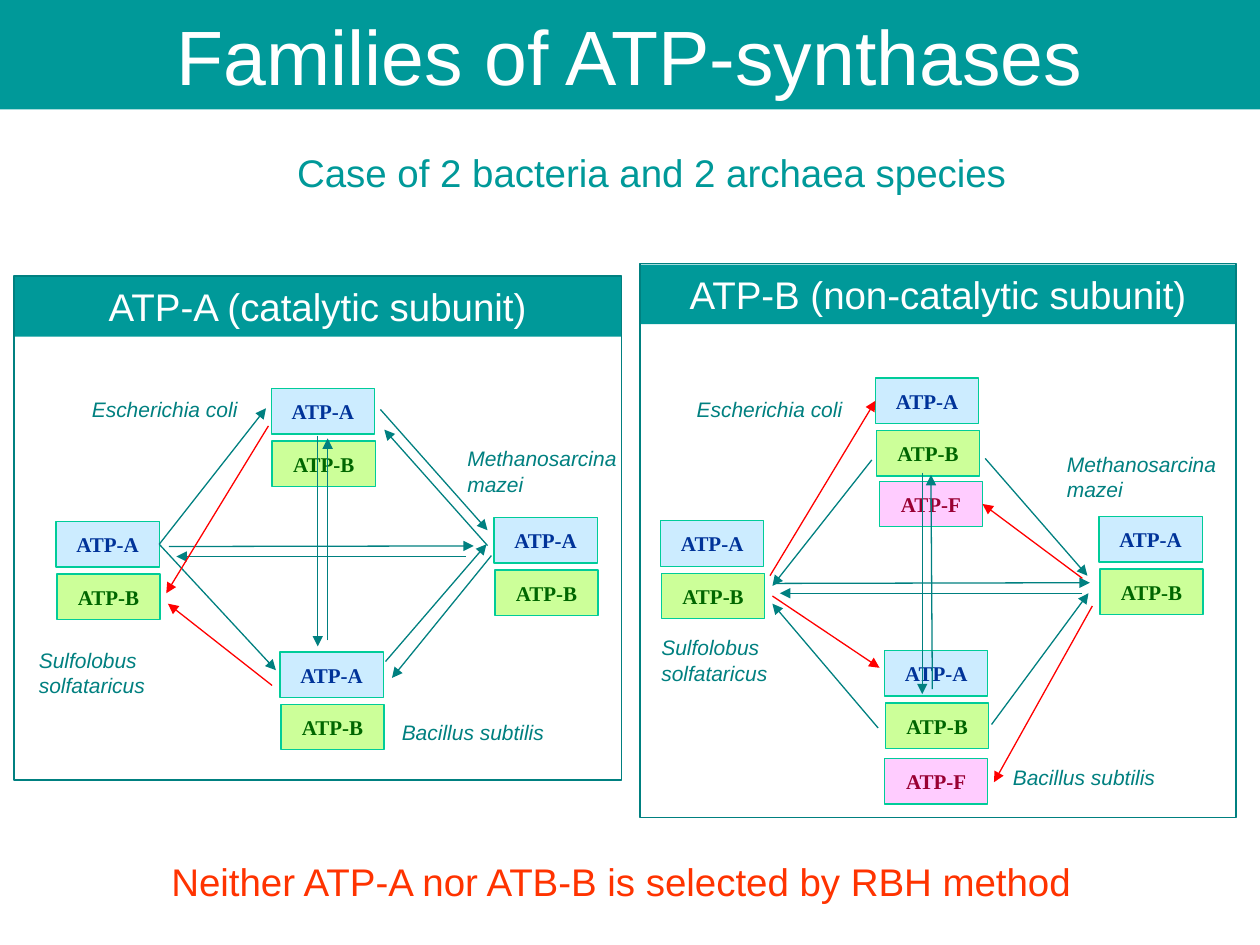
from dataclasses import dataclass

from lxml import etree
from pptx import Presentation
from pptx.dml.color import RGBColor
from pptx.enum.shapes import MSO_CONNECTOR, MSO_SHAPE
from pptx.enum.text import MSO_ANCHOR, PP_ALIGN
from pptx.oxml.ns import qn
from pptx.util import Pt

RECTANGLE = MSO_SHAPE.RECTANGLE
STRAIGHT = MSO_CONNECTOR.STRAIGHT
LEFT, CENTER = PP_ALIGN.LEFT, PP_ALIGN.CENTER
TOP, MIDDLE = MSO_ANCHOR.TOP, MSO_ANCHOR.MIDDLE
LEFT_SIDE, RIGHT_SIDE = 1, 3


@dataclass(frozen=True)
class Theme:
    """Colours, fonts and sizes of the slide."""
    teal: str = "009999"
    dark_teal: str = "008080"
    red: str = "FF0000"
    orange: str = "FF3300"
    white: str = "FFFFFF"
    box_line: str = "00CC99"
    sans: str = "Arial"
    serif: str = "Times New Roman"
    title_size: float = 44
    heading_size: float = 22
    label_size: float = 12
    line_width: float = 0.75


THEME = Theme()
SUBUNIT_COLORS = {"A": ("CCECFF", "003399"), "B": ("CCFF99", "006600"), "F": ("FFCCFF", "990033")}
BOX_WIDTH, BOX_HEIGHT, BOX_PITCH = 59, 26, 30

CATALYTIC = {
    "frame": (8, 157.7, 347, 288),
    "heading": "ATP-A (catalytic subunit)",
    "species": [
        ("Escherichia coli", (45.4, 223.2, 100.8, 21.6)),
        ("Bacillus subtilis", (222.5, 407.5, 99.4, 21.6)),
        ("Methanosarcina\nmazei", (260, 251.3, 103.7, 36)),
        ("Sulfolobus\nsolfataricus", (15.1, 366.5, 78.5, 36)),
    ],
    "stacks": {"coli": (155, 222), "solfataricus": (32, 298),
               "subtilis": (160, 372.5), "mazei": (282.3, 295.7)},
    "extras": {},
    "similar": [
        (("solfataricus A", RIGHT_SIDE), (152, 233.3)),
        ((217.4, 234), (278.6, 303)),
        ((278.6, 311.8), (219.6, 245.5)),
        ((280.8, 317.5), (224, 387.4)),
        ((220.3, 378), (278, 311)),
        (("solfataricus A", RIGHT_SIDE), (157.7, 383)),
        ((96.5, 312.3), (270.7, 312)),
        ((266.4, 318), (100.8, 318)),
        ((181.6, 249), (181.6, 369.4)),
        ((187.2, 366), (187.2, 250.5)),
    ],
    "conflicting": [
        ((153.4, 243.4), (95, 339)),
        ((155.5, 391.7), (96, 345)),
    ],
}

NON_CATALYTIC = {
    "frame": (365.8, 150.5, 340.5, 316.8),
    "heading": "ATP-B (non-catalytic subunit)",
    "species": [
        ("Escherichia coli", (391, 223.2, 100.8, 21.6)),
        ("Bacillus subtilis", (571.7, 433.4, 99.4, 21.6)),
        ("Methanosarcina\nmazei", (602.6, 254.2, 103.7, 36)),
        ("Sulfolobus\nsolfataricus", (370.8, 359.3, 78.5, 36)),
    ],
    "stacks": {"coli": (500.3, 216), "solfataricus": (377.5, 297.6),
               "subtilis": (505.5, 371.7), "mazei": (628, 295.2)},
    "extras": {"coli": (502.5, 275), "subtilis": (505.5, 433.5)},
    "similar": [
        ((442, 333.4), (622.8, 333)),
        ((618.5, 339), (445.7, 339)),
        ((527, 270), (527, 396.7)),
        ((532.8, 393.8), (532, 271.4)),
        ((498.2, 262.8), (441.4, 334.8)),
        ((563, 262), (621.4, 329)),
        ((501.8, 416), (441.4, 345)),
        ((566.6, 414), (622, 339)),
    ],
    "conflicting": [
        ((440, 329), ("coli A", LEFT_SIDE)),
        ((618.5, 330.5), ("coli F", RIGHT_SIDE)),
        ((441.4, 340.6), (502.6, 381.6)),
        ((624.2, 346.3), (568, 447)),
    ],
}


def color(value):
    """Turn a hex string into a colour."""
    return RGBColor.from_string(value)


def write_text(shape, text, size, ink, font=THEME.sans, align=LEFT, anchor=TOP,
               wrap=True, bold=False, italic=False):
    """Put formatted text in a shape."""
    frame = shape.text_frame
    frame.text = text
    frame.word_wrap = wrap
    frame.vertical_anchor = anchor
    for paragraph in frame.paragraphs:
        paragraph.alignment = align
        for run in paragraph.runs:
            run.font.name, run.font.size = font, Pt(size)
            run.font.bold, run.font.italic = bold, italic
            run.font.color.rgb = color(ink)


def add_rectangle(slide, bounds, fill=None, line=None):
    """Add a flat rectangle with optional fill and outline."""
    shape = slide.shapes.add_shape(RECTANGLE, *map(Pt, bounds))
    shape.shadow.inherit = False
    if fill:
        shape.fill.solid()
        shape.fill.fore_color.rgb = color(fill)
    else:
        shape.fill.background()
    if line:
        shape.line.color.rgb = color(line)
        shape.line.width = Pt(THEME.line_width)
    else:
        shape.line.fill.background()
    return shape


def add_label(slide, bounds, text, size, ink, **style):
    """Add a text box."""
    write_text(slide.shapes.add_textbox(*map(Pt, bounds)), text, size, ink, **style)


def add_subunit(slide, left, top, letter):
    """Add one coloured subunit box."""
    fill, ink = SUBUNIT_COLORS[letter]
    shape = add_rectangle(slide, (left, top, BOX_WIDTH, BOX_HEIGHT), fill, THEME.box_line)
    write_text(shape, f"ATP-{letter}", THEME.label_size, ink, THEME.serif,
               CENTER, MIDDLE, wrap=False, bold=True)
    return shape


def add_arrow(slide, start, end, ink, boxes):
    """Add an arrow between points or box sides."""
    points = [(0, 0) if point[0] in boxes else point for point in (start, end)]
    arrow = slide.shapes.add_connector(STRAIGHT, *(Pt(value) for point in points for value in point))
    for point, connect in ((start, arrow.begin_connect), (end, arrow.end_connect)):
        if point[0] in boxes:
            connect(boxes[point[0]], point[1])
    arrow.line.color.rgb = color(ink)
    arrow.line.width = Pt(THEME.line_width)
    etree.SubElement(arrow.line._get_or_add_ln(), qn("a:tailEnd"), type="triangle")
    etree.SubElement(arrow._element.spPr, qn("a:effectLst"))


def add_panel(slide, panel):
    """Add a framed diagram of four species."""
    left, top, width, _ = panel["frame"]
    header = add_rectangle(slide, (left, top + 0.7, width, 34), THEME.teal)
    write_text(header, panel["heading"], THEME.heading_size, THEME.white, align=CENTER)
    for name, bounds in panel["species"]:
        add_label(slide, bounds, name, THEME.label_size, THEME.dark_teal, wrap=False, italic=True)
    boxes = {}
    for name, (x, y) in panel["stacks"].items():
        boxes[f"{name} A"] = add_subunit(slide, x, y, "A")
        boxes[f"{name} B"] = add_subunit(slide, x + 0.5, y + BOX_PITCH, "B")
    for name, (x, y) in panel["extras"].items():
        boxes[f"{name} F"] = add_subunit(slide, x, y, "F")
    for kind, ink in (("similar", THEME.dark_teal), ("conflicting", THEME.red)):
        for start, end in panel[kind]:
            add_arrow(slide, start, end, ink, boxes)
    add_rectangle(slide, panel["frame"], line=THEME.dark_teal)


def main():
    """Build and save the slide."""
    presentation = Presentation()
    presentation.slide_width, presentation.slide_height = Pt(720), Pt(540)
    slide = presentation.slides.add_slide(presentation.slide_layouts[6])
    title = add_rectangle(slide, (0, 0, 720, 62.6), THEME.teal)
    write_text(title, "Families of ATP-synthases", THEME.title_size, THEME.white,
               align=CENTER, anchor=MIDDLE)
    add_label(slide, (162.7, 81.4, 438.5, 34), "Case of 2 bacteria and 2 archaea species",
              THEME.heading_size, THEME.teal, wrap=False)
    for panel in (CATALYTIC, NON_CATALYTIC):
        add_panel(slide, panel)
    add_label(slide, (42.5, 487, 625, 34), "Neither ATP-A nor ATB-B is selected by RBH method",
              THEME.heading_size, THEME.orange, align=CENTER)
    presentation.save("out.pptx")


if __name__ == "__main__":
    main()
